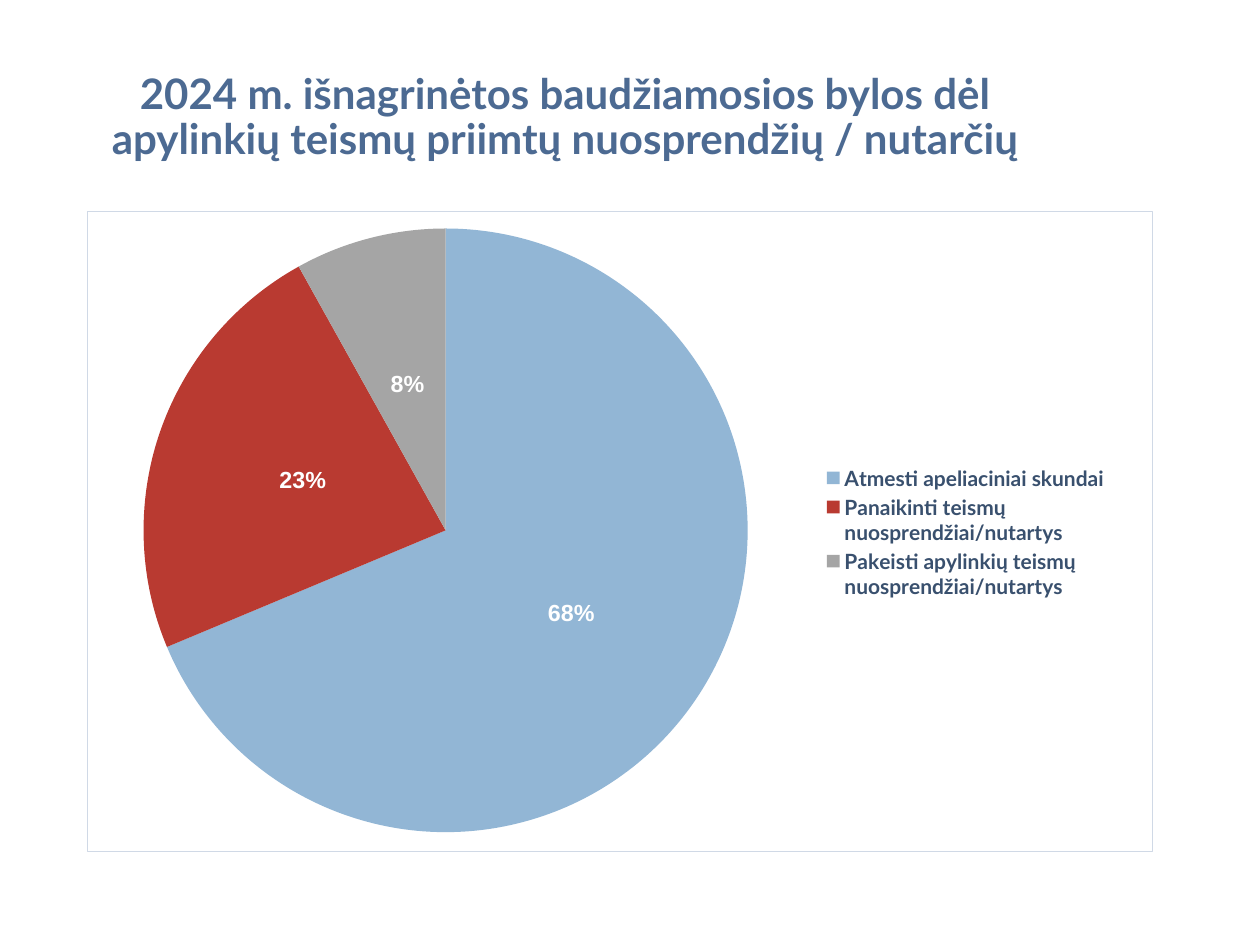
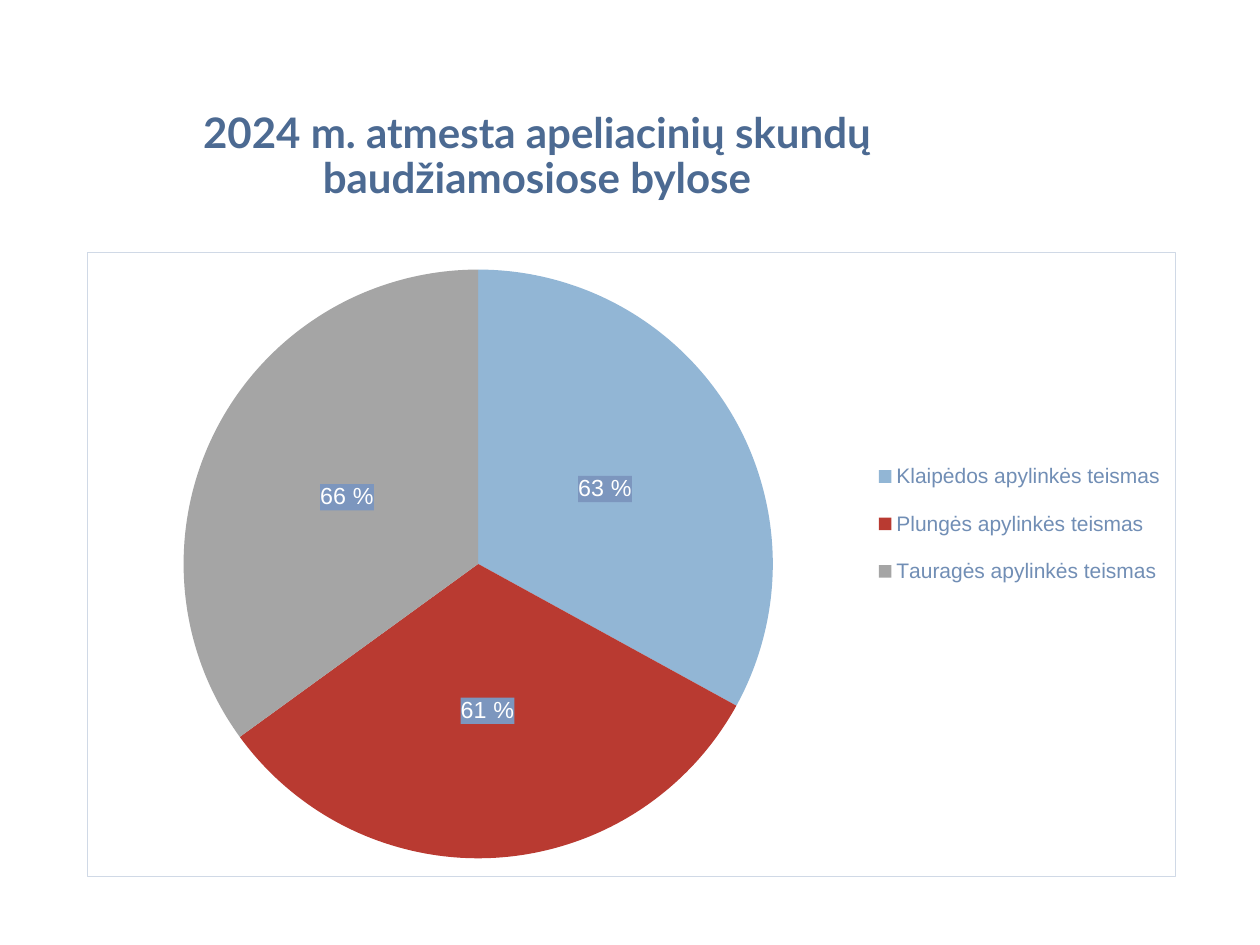
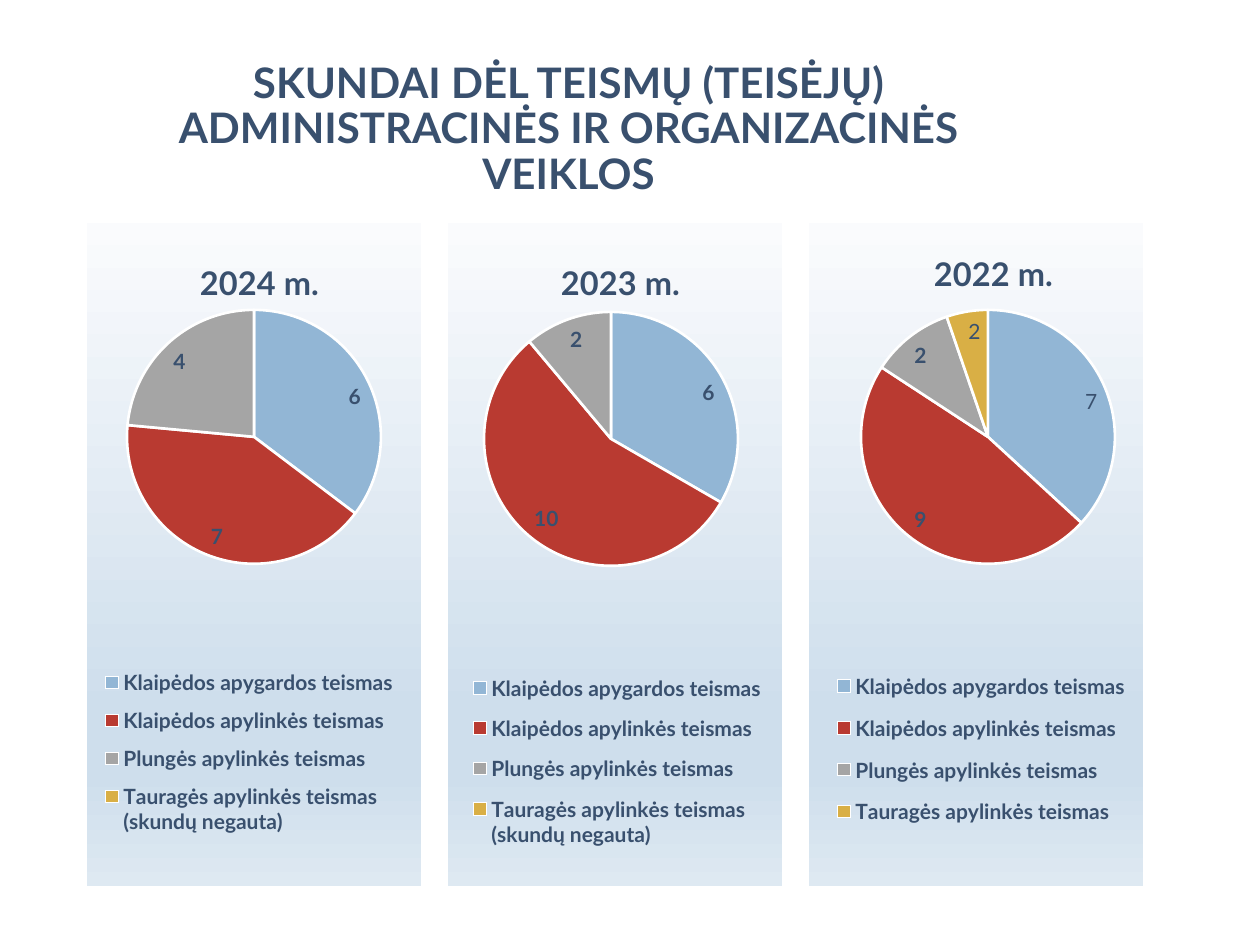
from dataclasses import dataclass, field
from typing import Any, Optional

from lxml import etree
from pptx import Presentation
from pptx.chart.data import CategoryChartData
from pptx.dml.color import RGBColor
from pptx.enum.chart import XL_CHART_TYPE as ChartType
from pptx.enum.chart import XL_LABEL_POSITION as LabelPos
from pptx.enum.chart import XL_LEGEND_POSITION as LegendPos
from pptx.enum.text import MSO_ANCHOR as Anchor
from pptx.enum.text import PP_ALIGN as Align
from pptx.oxml import parse_xml
from pptx.oxml.ns import nsdecls, qn
from pptx.util import Emu, Pt

# Scale: 126 px to the inch
PX = 914400 // 126
SLIDE_W, SLIDE_H = 1260, 945
TITLE_ONLY = 5

# Shared colours
WHITE = RGBColor(0xFF, 0xFF, 0xFF)
NAVY = RGBColor(0x39, 0x50, 0x6E)
STEEL = RGBColor(0x4C, 0x6A, 0x92)
SOFT_BLUE = RGBColor(0x71, 0x8E, 0xB5)
LABEL_BACK = RGBColor(0x7C, 0x96, 0xBE)
BORDER = RGBColor(0xD0, 0xD9, 0xE6)
SLICES = (
    RGBColor(0x92, 0xB6, 0xD5),
    RGBColor(0xB9, 0x3A, 0x31),
    RGBColor(0xA5, 0xA5, 0xA5),
    RGBColor(0xD9, 0xAF, 0x45),
)
PANEL_STOPS = (
    (0, RGBColor(0xFA, 0xFB, 0xFD)),
    (74, RGBColor(0xCE, 0xDE, 0xEC)),
    (83, RGBColor(0xCE, 0xDE, 0xEC)),
    (100, RGBColor(0xDE, 0xE9, 0xF2)),
)

# Shared text formats
TITLE = dict(name="Lato", size=Pt(24), bold=True)
NAVY_BOLD = dict(name="Lato", size=Pt(12), bold=True, color=NAVY)
NAVY_PLAIN = {**NAVY_BOLD, "bold": False}
YEAR = {**NAVY_BOLD, "size": Pt(18.6)}
SOFT_PLAIN = dict(name="Arial", size=Pt(12), bold=False, color=SOFT_BLUE)
WHITE_BOLD = dict(name="Arial", size=Pt(13.3), bold=True, color=WHITE)
WHITE_PLAIN = {**WHITE_BOLD, "bold": False}


@dataclass(frozen=True)
class Box:
    x: int
    y: int
    w: int
    h: int


@dataclass(frozen=True)
class Pie:
    frame: Box
    circle: Box
    legend: Box
    slices: dict[str, int]
    legend_format: dict[str, Any]
    label_format: dict[str, Any]
    label_pos: LabelPos
    number_format: str = "0"
    own_labels: dict[int, str] = field(default_factory=dict)
    own_format: Optional[dict[str, Any]] = None
    label_back: Optional[RGBColor] = None
    year: str = ""
    year_box: Optional[Box] = None


@dataclass(frozen=True)
class Page:
    title: str
    title_box: Box
    title_color: RGBColor
    pies: list[Pie]
    title_bottom: int = 6


def style(font: Any, formats: dict[str, Any]) -> None:
    for name, value in formats.items():
        if name == "color":
            font.color.rgb = value
        else:
            setattr(font, name, value)


def solid(color: RGBColor) -> str:
    return f'<a:solidFill><a:srgbClr val="{color}"/></a:solidFill>'


def shape_properties(content: str) -> etree._Element:
    return parse_xml(f'<c:spPr {nsdecls("c", "a")}>{content}</c:spPr>')


def bordered() -> str:
    return f'<a:noFill/><a:ln w="9525">{solid(BORDER)}</a:ln>'


def shaded() -> str:
    stops = "".join(
        f'<a:gs pos="{percent * 1000}"><a:srgbClr val="{color}"/></a:gs>'
        for percent, color in PANEL_STOPS
    )
    return (f'<a:gradFill><a:gsLst>{stops}</a:gsLst><a:lin ang="5400000" scaled="0"/>'
            "</a:gradFill><a:ln><a:noFill/></a:ln>")


def place(chart: Any, tag: str, before: str, box: Box, frame: Box) -> None:
    """Pin a chart part to a box given in slide px."""
    part = chart.element.find(".//" + qn(tag))
    for old in part.findall(qn("c:layout")):
        part.remove(old)
    inner = '<c:layoutTarget val="inner"/>' if tag == "c:plotArea" else ""
    shares = {"x": (box.x - frame.x) / frame.w, "y": (box.y - frame.y) / frame.h}
    if tag != "c:title":
        shares |= {"w": box.w / frame.w, "h": box.h / frame.h}
    modes = '<c:xMode val="edge"/><c:yMode val="edge"/>'
    values = "".join(f'<c:{key} val="{share:.4f}"/>' for key, share in shares.items())
    layout = parse_xml(f'<c:layout {nsdecls("c")}><c:manualLayout>{inner}{modes}{values}'
                       "</c:manualLayout></c:layout>")
    if before:
        part.find(qn(before)).addnext(layout)
    else:
        part.insert(0, layout)


def add_labels(chart: Any, pie: Pie) -> None:
    series = chart.plots[0].series[0]
    labels = series.data_labels
    labels.show_value = True
    labels.number_format = pie.number_format
    labels.number_format_is_linked = False
    labels.position = pie.label_pos
    style(labels.font, pie.label_format)
    for index, text in pie.own_labels.items():
        label = series.points[index].data_label
        label.text_frame.text = text
        style(label.text_frame.paragraphs[0].runs[0].font, pie.own_format)
        label.position = pie.label_pos
    if pie.label_back:
        for label_xml in chart.element.iter(qn("c:dLbl")):
            label_xml.find(qn("c:tx")).addnext(shape_properties(solid(pie.label_back)))


def add_pie(slide: Any, pie: Pie) -> None:
    data = CategoryChartData()
    data.categories = list(pie.slices)
    data.add_series("Series 1", list(pie.slices.values()))
    frame = pie.frame
    edges = [Emu(n * PX) for n in (frame.x, frame.y, frame.w, frame.h)]
    chart = slide.shapes.add_chart(ChartType.PIE, *edges, data).chart
    style(chart.font, pie.legend_format)
    chart.plots[0].vary_by_categories = True

    # Slices
    points = chart.plots[0].series[0].points
    for index, color in zip(range(len(pie.slices)), SLICES):
        look = points[index].format
        look.fill.solid()
        look.fill.fore_color.rgb = color
        if pie.year:
            look.line.color.rgb = WHITE
            look.line.width = Pt(1.5)
        else:
            look.line.fill.background()
    add_labels(chart, pie)

    # Heading
    chart.has_title = bool(pie.year)
    if pie.year:
        heading = chart.chart_title.text_frame
        heading.text = pie.year
        style(heading.paragraphs[0].runs[0].font, YEAR)
        place(chart, "c:title", "c:tx", pie.year_box, frame)

    # Legend
    chart.has_legend = True
    chart.legend.position = LegendPos.BOTTOM if pie.year else LegendPos.RIGHT
    chart.legend.include_in_layout = False
    style(chart.legend.font, pie.legend_format)
    place(chart, "c:legend", "c:legendPos", pie.legend, frame)

    # Circle and background
    place(chart, "c:plotArea", "", pie.circle, frame)
    background = shape_properties(shaded() if pie.year else bordered())
    chart.element.find(qn("c:chart")).addnext(background)


def add_page(deck: Any, page: Page) -> None:
    slide = deck.slides.add_slide(deck.slide_layouts[TITLE_ONLY])
    title, box = slide.shapes.title, page.title_box
    spots = dict(left=box.x, top=box.y, width=box.w, height=box.h)
    for name, value in spots.items():
        setattr(title, name, Emu(value * PX))
    words = title.text_frame
    words.text = page.title
    words.word_wrap = True
    words.vertical_anchor = Anchor.MIDDLE
    words.margin_bottom = Emu(page.title_bottom * PX)
    line = words.paragraphs[0]
    line.alignment = Align.CENTER
    line.line_spacing = 0.9
    style(line.runs[0].font, {**TITLE, "color": page.title_color})
    for pie in page.pies:
        add_pie(slide, pie)


# Slide 3: one panel per year
COURTS = (
    "Klaipėdos apygardos teismas",
    "Klaipėdos apylinkės teismas",
    "Plungės apylinkės teismas",
    "Tauragės apylinkės teismas",
)
NO_COMPLAINTS = " (skundų negauta)"


def year_pie(
    column: int, year: str, counts: tuple[int, ...], circle: tuple[int, int],
    heading: tuple[int, int], legend: Box, own_labels: dict[int, str],
) -> Pie:
    names = list(COURTS)
    if counts[-1] == 0:
        names[-1] += NO_COMPLAINTS
    return Pie(
        frame=Box(87 + 361 * column, 223, 334, 663),
        circle=Box(*circle, 254, 254),
        legend=legend,
        slices=dict(zip(names, counts)),
        legend_format=NAVY_BOLD,
        label_format=NAVY_BOLD,
        label_pos=LabelPos.INSIDE_END,
        number_format="0;;",
        own_labels=own_labels,
        own_format=NAVY_PLAIN,
        year=year,
        year_box=Box(*heading, 120, 40),
    )


PAGES = [
    Page(
        "2024 m. išnagrinėtos baudžiamosios bylos dėl apylinkių teismų "
        "priimtų nuosprendžių / nutarčių",
        Box(87, 50, 956, 183), STEEL,
        [Pie(
            frame=Box(87, 211, 1066, 641),
            circle=Box(143, 228, 605, 605),
            legend=Box(806, 461, 320, 142),
            slices={
                "Atmesti apeliaciniai skundai": 68,
                "Panaikinti teismų nuosprendžiai/nutartys": 23,
                "Pakeisti apylinkių teismų nuosprendžiai/nutartys": 8,
            },
            legend_format=NAVY_BOLD,
            label_format=WHITE_BOLD,
            label_pos=LabelPos.CENTER,
            number_format='0"%"',
        )],
        title_bottom=52,
    ),
    Page(
        "2024 m. atmesta apeliacinių skundų baudžiamosiose bylose",
        Box(87, 102, 900, 111), STEEL,
        [Pie(
            frame=Box(87, 252, 1089, 625),
            circle=Box(183, 269, 590, 590),
            legend=Box(870, 440, 300, 168),
            slices=dict(zip(COURTS[1:], (33, 32, 35))),
            legend_format=SOFT_PLAIN,
            label_format=WHITE_BOLD,
            label_pos=LabelPos.CENTER,
            own_labels={0: "63 %", 1: "61 %", 2: "66 %"},
            own_format=WHITE_PLAIN,
            label_back=LABEL_BACK,
        )],
    ),
    Page(
        "SKUNDAI DĖL TEISMŲ (TEISĖJŲ) ADMINISTRACINĖS IR ORGANIZACINĖS VEIKLOS",
        Box(87, 50, 963, 160), NAVY,
        [
            year_pie(0, "2024 m.", (6, 7, 4, 0), (127, 310), (194, 253),
                     Box(97, 657, 305, 190), {}),
            year_pie(1, "2023 m.", (6, 10, 2, 0), (484, 312), (555, 253),
                     Box(465, 660, 305, 202), {}),
            year_pie(2, "2022 m.", (7, 9, 2, 1), (861, 310), (928, 244),
                     Box(829, 657, 305, 184), {0: "7", 3: "2"}),
        ],
    ),
]


def main() -> None:
    deck = Presentation()
    deck.slide_width, deck.slide_height = Emu(SLIDE_W * PX), Emu(SLIDE_H * PX)
    for page in PAGES:
        add_page(deck, page)
    deck.save("out.pptx")


if __name__ == "__main__":
    main()
